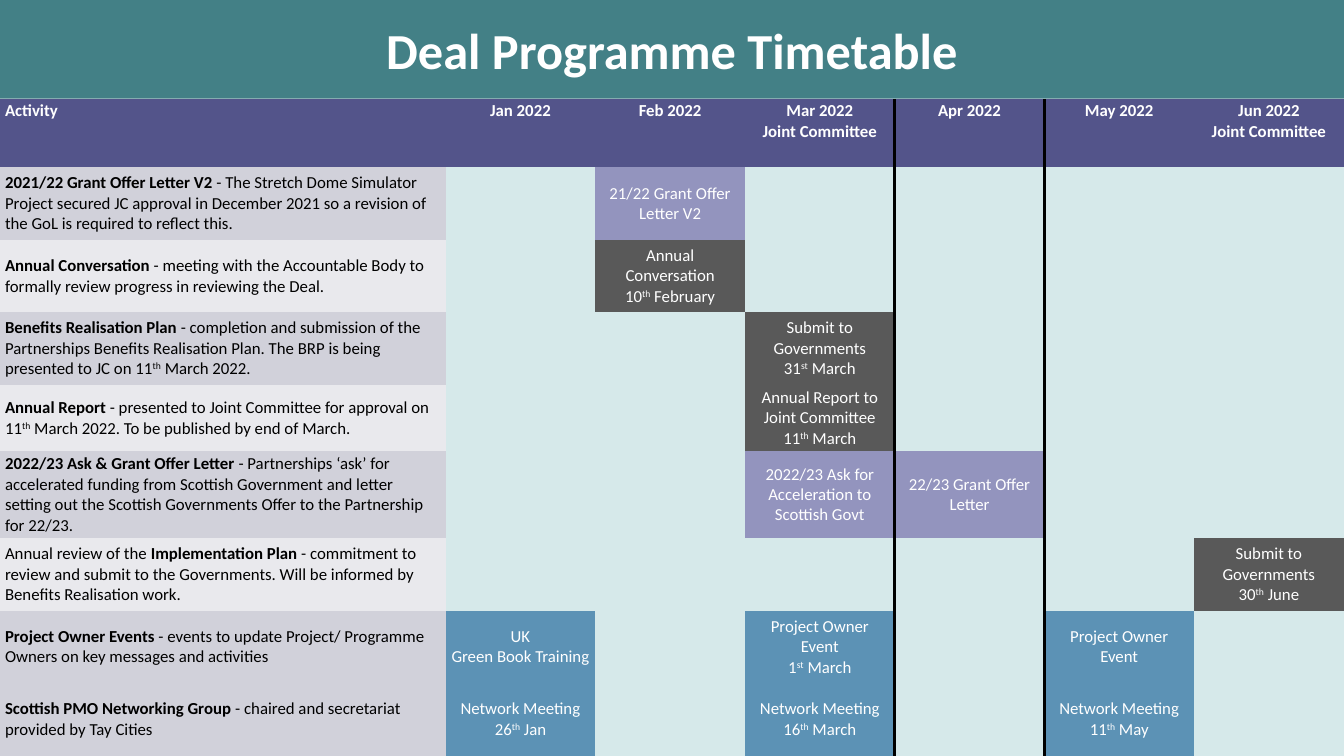
import pptx
import pptx.util
import pptx.dml.color
import pptx.enum.text
import pptx.oxml
import pptx.oxml.ns
from pptx.util import Inches

COLORS = {
    "title": "438086", "header": "53548A", "white": "FFFFFF", "black": "000000",
    "odd": "D1D1DA", "even": "E9E9ED", "free": "D6E9EA",
    "offer": "9394BE", "formal": "595959", "event": "5C92B5",
}
NO_GRID_STYLE = "{2D5ABB26-0587-4C30-8999-92F81FD0307C}"
SLIDE_W, SLIDE_H, TITLE_H, ACTIVITY_W = 13.33, 7.5, 0.98, 4.42

# In texts, *...* is bold, ^...^ is superscript and a newline starts a paragraph.
HEADINGS = ["Activity", "Jan 2022", "Feb 2022", "Mar 2022\nJoint Committee",
            "Apr 2022", "May 2022", "Jun 2022\nJoint Committee"]
JAN, FEB, MAR, APR, MAY, JUN = range(1, 7)
HEADER_H = 0.68
# Row height, activity, {month: (kind, text)}
ACTIVITIES = [
    (0.72, "*2021/22 Grant Offer Letter V2* - The Stretch Dome Simulator Project secured JC "
           "approval in December 2021 so a revision of the GoL is required to reflect this.",
     {FEB: ("offer", "21/22 Grant Offer Letter V2")}),
    (0.72, "*Annual Conversation* - meeting with the Accountable Body to formally review "
           "progress in reviewing the Deal.",
     {FEB: ("formal", "Annual Conversation\n10^th^ February")}),
    (0.72, "*Benefits Realisation Plan* - completion and submission of the Partnerships "
           "Benefits Realisation Plan. The BRP is being presented to JC on 11^th^ March 2022.",
     {MAR: ("formal", "Submit to Governments\n31^st^ March")}),
    (0.66, "*Annual Report* - presented to Joint Committee for approval on 11^th^ March 2022. "
           "To be published by end of March.",
     {MAR: ("formal", "Annual Report to Joint Committee\n11^th^ March")}),
    (0.86, "*2022/23 Ask & Grant Offer Letter* - Partnerships ‘ask’ for accelerated funding "
           "from Scottish Government and letter setting out the Scottish Governments Offer "
           "to the Partnership for 22/23.",
     {MAR: ("offer", "2022/23 Ask for Acceleration to Scottish Govt"),
      APR: ("offer", "22/23 Grant Offer Letter")}),
    (0.72, "Annual review of the *Implementation Plan* - commitment to review and submit to "
           "the Governments. Will be informed by Benefits Realisation work.",
     {JUN: ("formal", "Submit to Governments\n30^th^ June")}),
    (0.28, "*Project Owner Events* - events to update Project/ Programme Owners on key "
           "messages and activities",
     {JAN: ("event", "UK\nGreen Book Training"),
      MAR: ("event", "Project Owner Event\n1^st^ March"),
      MAY: ("event", "Project Owner Event")}),
    (0.44, "", {}),
    (0.72, "*Scottish PMO Networking Group* - chaired and secretariat provided by Tay Cities",
     {JAN: ("event", "Network Meeting\n26^th^ Jan"),
      MAR: ("event", "Network Meeting\n16^th^ March"),
      MAY: ("event", "Network Meeting\n11^th^ May")}),
]
OWNER_EVENTS_ROW = 7


class Deck:
    font = "Calibri"
    text_size = 12
    title_size = 36

    def __init__(self):
        self.prs = pptx.Presentation()
        self.prs.slide_width = Inches(SLIDE_W)
        self.prs.slide_height = Inches(SLIDE_H)
        self.slide = self.prs.slides.add_slide(self.prs.slide_layouts[5])

    def paint(self, target, color):
        target.fill.solid()
        target.fill.fore_color.rgb = pptx.dml.color.RGBColor.from_string(COLORS[color])

    def style(self, font, size, color, bold):
        font.name = self.font
        font.size = pptx.util.Pt(size)
        font.bold = bold
        font.color.rgb = pptx.dml.color.RGBColor.from_string(COLORS[color])

    def add_text(self, tf, text, color, size=text_size, bold=False, centered=True):
        """Fill a text frame, turning the bold and superscript marks into runs."""
        align = pptx.enum.text.PP_ALIGN
        for n, line in enumerate(text.split("\n")):
            p = tf.add_paragraph() if n else tf.paragraphs[0]
            p.alignment = align.CENTER if centered else align.LEFT
            for i, part in enumerate(line.split("*")):
                for j, piece in enumerate(part.split("^")):
                    if not piece:
                        continue
                    r = p.add_run()
                    r.text = piece
                    self.style(r.font, size, color, bold or i % 2 == 1)
                    if j % 2:
                        r._r.get_or_add_rPr().set("baseline", "30000")
            if not line:
                p._p.get_or_add_endParaRPr().set("sz", str(size * 100))

    def title(self, text):
        sp = self.slide.shapes.title
        sp.left, sp.top = 0, 0
        sp.width, sp.height = Inches(SLIDE_W), Inches(TITLE_H)
        self.paint(sp, "title")
        sp.text_frame.vertical_anchor = pptx.enum.text.MSO_ANCHOR.MIDDLE
        self.add_text(sp.text_frame, text, "white", self.title_size, True)

    def table(self, col_widths, row_heights):
        frame = self.slide.shapes.add_table(
            len(row_heights), len(col_widths), 0, Inches(TITLE_H),
            Inches(sum(col_widths)), Inches(sum(row_heights)))
        table = frame.table
        table.horz_banding = False
        table._tbl.tblPr.find(pptx.oxml.ns.qn("a:tableStyleId")).text = NO_GRID_STYLE
        for column, width in zip(table.columns, col_widths):
            column.width = Inches(width)
        for row, height in zip(table.rows, row_heights):
            row.height = Inches(height)
        return table

    def cell(self, cell, text, fill, color="white", bold=False, centered=True, anchor="MIDDLE"):
        cell.margin_left = cell.margin_right = Inches(0.05)
        cell.margin_top = cell.margin_bottom = Inches(0.02)
        cell.vertical_anchor = pptx.enum.text.MSO_ANCHOR[anchor]
        self.paint(cell, fill)
        self.add_text(cell.text_frame, text, color, bold=bold, centered=centered)

    def border(self, cell, side):
        ln = pptx.oxml.parse_xml(
            f'<a:ln{side} {pptx.oxml.ns.nsdecls("a")} w="{pptx.util.Pt(2.25)}"><a:solidFill>'
            f'<a:srgbClr val="{COLORS["black"]}"/></a:solidFill></a:ln{side}>')
        cell._tc.get_or_add_tcPr().insert(0, ln)


def main():
    deck = Deck()
    deck.title("Deal Programme Timetable")
    month_w = (SLIDE_W - ACTIVITY_W) / JUN
    table = deck.table([ACTIVITY_W] + [month_w] * JUN,
                       [HEADER_H] + [height for height, _, _ in ACTIVITIES])

    for col, heading in enumerate(HEADINGS):
        deck.cell(table.cell(0, col), heading, "header", bold=True,
                  centered=col > 0, anchor="TOP")
    for row, (_, activity, bookings) in enumerate(ACTIVITIES, 1):
        deck.cell(table.cell(row, 0), activity, "odd" if row % 2 else "even",
                  "black", centered=False)
        for month in range(JAN, JUN + 1):
            kind, text = bookings.get(month, ("free", ""))
            deck.cell(table.cell(row, month), text, kind)

    for row in range(len(ACTIVITIES) + 1):
        deck.border(table.cell(row, MAR), "R")
        deck.border(table.cell(row, APR), "L")
    for col in range(JUN):
        table.cell(OWNER_EVENTS_ROW, col).merge(table.cell(OWNER_EVENTS_ROW + 1, col))

    deck.prs.save("out.pptx")


if __name__ == "__main__":
    main()
